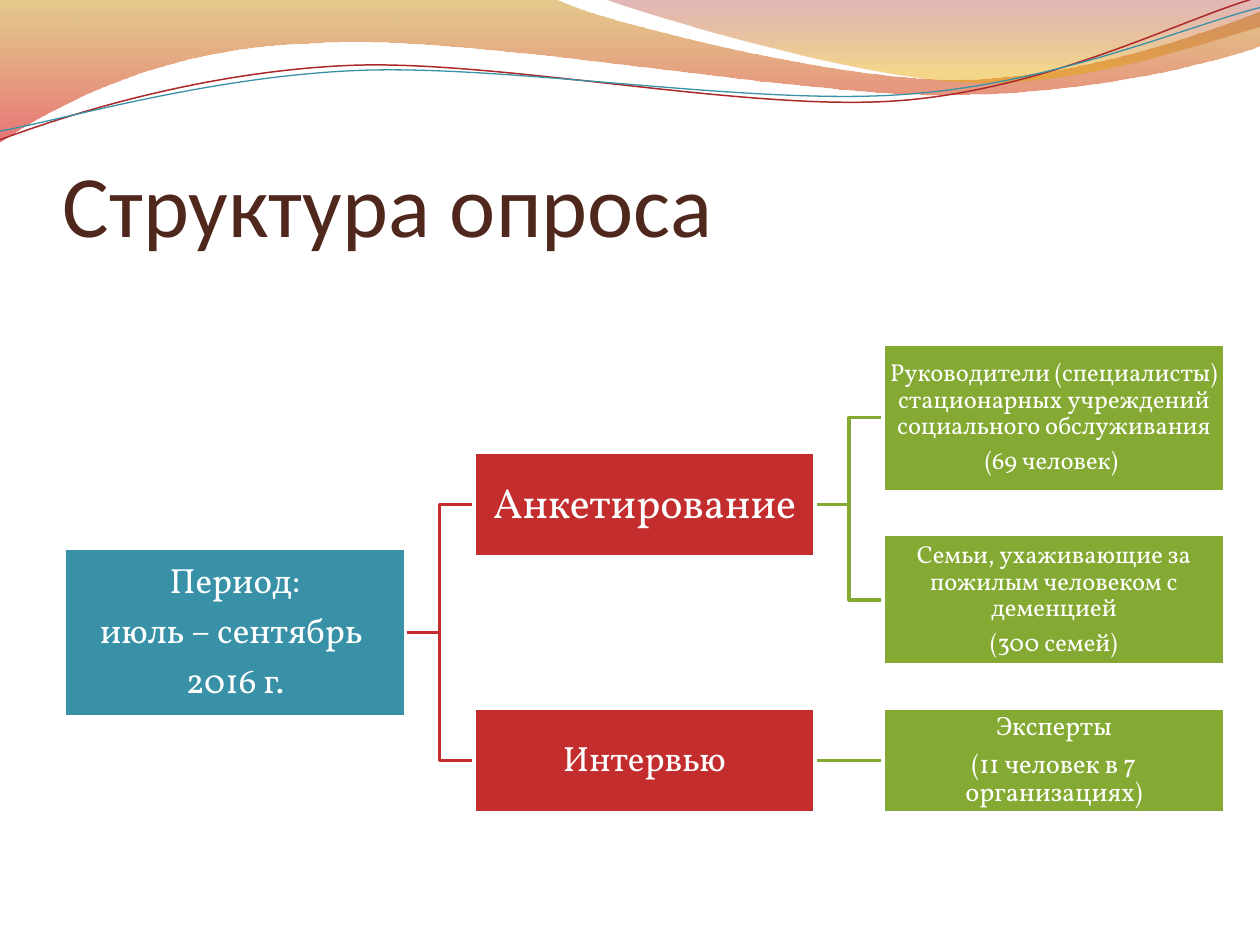
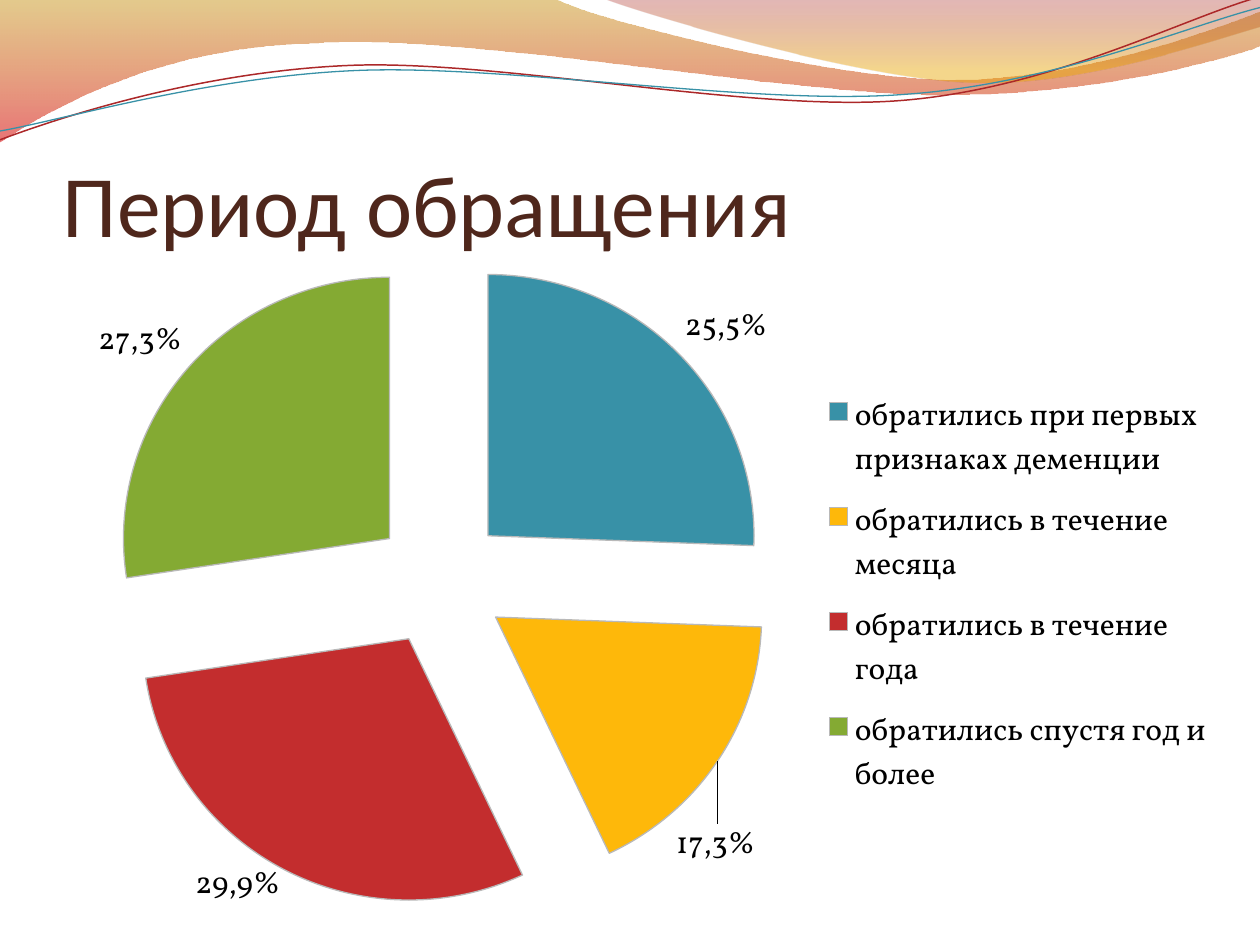
from lxml import etree
from pptx import Presentation
from pptx import util as u
from pptx.chart.data import CategoryChartData
from pptx.dml.color import RGBColor
from pptx.enum import chart as ch, shapes, text
from pptx.oxml import ns

C = {"teal": "3891A7", "red": "C32D2E", "green": "84AA33", "amber": "FEB80A",
     "title": "4F271C", "white": "FFFFFF", "black": "000000", "edge": "B9B9B9",
     "crimson": "AC2829", "gold": "C38B00", "scarlet": "D60305",
     "wine": "A11112", "orange": "E9A600"}
C = {name: RGBColor.from_string(value) for name, value in C.items()}
BODY, HEAD = "Vollkorn", "Calibri"
W, H = 10, 7.5


def write(tf, lines, size, color="black", font=BODY, align=None,
          spacing=None, after=0):
    """Fill a text frame, one paragraph for each line."""
    for i, line in enumerate(lines):
        p = tf.add_paragraph() if i else tf.paragraphs[0]
        if align is not None:
            p.alignment = align
        if spacing:
            p.line_spacing = spacing
            p.space_after = u.Pt(after * size)
        r = p.add_run()
        r.text = line
        r.font.size, r.font.name = u.Pt(size), font
        r.font.color.rgb = C[color]


def wave(s, segments, close):
    """Draw an outline from points (x, y) and Bezier curves (6 numbers)."""
    emu = [(u.Inches(seg[i]), u.Inches(seg[i + 1]))
           for seg in segments for i in range(0, len(seg), 2)]
    fb = s.shapes.build_freeform(*emu[0], scale=1.0)
    fb.add_line_segments(emu[1:], close=close)
    sp = fb.convert_to_shape()
    sp.shadow.inherit = False
    # Join the three steps of each curve into one Bezier segment
    steps = iter(sp._element.xpath(".//a:path/a:lnTo"))
    for seg in segments[1:]:
        group = [next(steps) for _ in range(len(seg) // 2)]
        if len(group) == 3:
            curve = etree.Element(ns.qn("a:cubicBezTo"))
            group[0].addprevious(curve)
            for step in group:
                curve.append(step[0])
                step.getparent().remove(step)
    return sp


prs = Presentation()
prs.slide_width, prs.slide_height = u.Inches(W), u.Inches(H)

# Shared decoration: gradient bands as (outline, stops), then thin lines
bands = [
    ([(0, 0), (4.4, -0.01), (4.76, 0.17, 6.64, 0.63, 7.58, 0.63),
      (8.53, 0.63, 9.58, 0.26, W, 0.09), (10.01, 0.36),
      (9.83, 0.44, 8.7, 0.76, 7.46, 0.75), (6.22, 0.75, 3.82, 0.28, 2.57, 0.34),
      (1.29, 0.36, 0.46, 0.83, -0.01, 1.13)],
     [("gold", 0, 45), ("scarlet", 1, 55)]),
    ([(4.79, -0.01), (5.09, 0.11, 6.82, 0.62, 7.69, 0.65),
      (8.56, 0.69, 9.61, 0.32, W, 0.21), (W, 0)],
     [("wine", 0, 30), ("orange", 0.8, 45)]),
]
threads = [
    ([(0, 1.11), (0.48, 0.93, 1.58, 0.57, 2.77, 0.52),
      (3.95, 0.47, 5.93, 0.89, 7.13, 0.8), (8.33, 0.71, 9.38, 0.15, 9.98, -0.02)],
     "crimson", 0.85),
    ([(0, 1.04), (0.47, 0.96, 1.64, 0.61, 2.83, 0.56),
      (4.03, 0.51, 5.97, 0.84, 7.17, 0.75), (8.36, 0.67, 9.41, 0.21, W, 0.06)],
     "teal", 0.75),
]

slides = []
for title in ("Структура опроса", "Период обращения"):
    s = prs.slides.add_slide(prs.slide_layouts[6])
    slides.append(s)
    for outline, stops in bands:
        sp = wave(s, outline, True)
        sp.line.fill.background()
        sp.fill.gradient()
        sp.fill.gradient_angle = 270
        for stop, (color, position, _) in zip(sp.fill.gradient_stops, stops):
            stop.color.rgb, stop.position = C[color], position
        for clr, (_, _, opacity) in zip(sp._element.xpath(".//a:gs/a:srgbClr"), stops):
            etree.SubElement(clr, ns.qn("a:alpha")).set("val", str(opacity * 1000))
    for outline, color, width in threads:
        sp = wave(s, outline, False)
        sp.fill.background()
        sp.line.color.rgb, sp.line.width = C[color], u.Pt(width)
    # Title
    tf = s.shapes.add_textbox(*map(u.Inches, (0.5, 0.77, 0.9 * W, 1.25))).text_frame
    tf.word_wrap, tf.vertical_anchor = True, text.MSO_ANCHOR.BOTTOM
    tf.margin_left = tf.margin_right = tf.margin_bottom = 0
    write(tf, [title], 50, "title", HEAD)

# Slide 1: survey tree, boxes as column, top, height, size, lines
s = slides[0]
LEFT, STEP, BOX_W = 0.51, 3.25, 2.71
column_colors = ["teal", "red", "green"]
tree = {
    "period": (0, 4.35, 1.34, 20, ["Период:", "июль – сентябрь ", "2016 г."]),
    "survey": (1, 3.59, 0.83, 24, ["Анкетирование"]),
    "heads": (2, 2.73, 1.17, 14, [
        "Руководители (специалисты) стационарных учреждений социального обслуживания",
        "(69 человек) "]),
    "families": (2, 4.24, 1.04, 14, [
        "Семьи, ухаживающие за пожилым человеком с деменцией", "(300 семей)"]),
    "interview": (1, 5.62, 0.83, 20, ["Интервью"]),
    "experts": (2, 5.62, 0.83, 15, ["Эксперты", "(11 человек в 7 организациях)"]),
}
boxes = {}
for name, (col, top, height, size, lines) in tree.items():
    sp = s.shapes.add_shape(shapes.MSO_SHAPE.RECTANGLE, *map(
        u.Inches, (LEFT + col * STEP, top, BOX_W, height)))
    boxes[name] = sp
    sp.shadow.inherit = False
    sp.fill.solid()
    sp.fill.fore_color.rgb = C[column_colors[col]]
    sp.line.color.rgb, sp.line.width = C["white"], u.Pt(2)
    tf = sp.text_frame
    tf.word_wrap, tf.vertical_anchor = True, text.MSO_ANCHOR.MIDDLE
    tf.margin_left = tf.margin_right = tf.margin_top = tf.margin_bottom = u.Inches(0.01)
    write(tf, lines, size, "white", align=text.PP_ALIGN.CENTER, spacing=0.9, after=0.35)

# Branches lie behind the boxes
for parent, child in [("period", "survey"), ("period", "interview"), ("survey", "heads"),
                      ("survey", "families"), ("interview", "experts")]:
    level = tree[parent][1] == tree[child][1]
    kind = shapes.MSO_CONNECTOR.STRAIGHT if level else shapes.MSO_CONNECTOR.ELBOW
    cn = s.shapes.add_connector(kind, 0, 0, 0, 0)
    cn.begin_connect(boxes[parent], 3)
    cn.end_connect(boxes[child], 1)
    cn.line.color.rgb = C[column_colors[tree[child][0]]]
    cn.line.width = u.Pt(2)
    etree.SubElement(cn._element.spPr, ns.qn("a:effectLst"))
    boxes["period"]._element.addprevious(cn._element)

# Slide 2: exploded pie
s = slides[1]
answers = [
    ("обратились при первых признаках деменции", 0.255, "25,5%", "teal"),
    ("обратились в течение месяца", 0.173, "17,3%", "amber"),
    ("обратились в течение года", 0.295, "29,9%", "red"),
    ("обратились спустя год и более", 0.273, "27,3%", "green"),
]
data = CategoryChartData(number_format="0.00%")
data.categories = [a[0] for a in answers]
data.add_series("Series 1", [a[1] for a in answers])
chart = s.shapes.add_chart(ch.XL_CHART_TYPE.PIE, *map(
    u.Inches, (0.28, 2.02, 9.45, 5.28)), data).chart
chart.has_title = False
chart.font.size, chart.font.name = u.Pt(18), BODY
chart.font.color.rgb = C["black"]
chart.has_legend = True
chart.legend.position = ch.XL_LEGEND_POSITION.RIGHT
chart.legend.include_in_layout = False

plot = chart.plots[0]
plot.vary_by_categories = True
series = plot.series[0]
labels = series.data_labels
labels.show_value = True
labels.number_format, labels.number_format_is_linked = "0.00%", False
labels.position = ch.XL_LABEL_POSITION.OUTSIDE_END
for i, (_, _, label, color) in enumerate(answers):
    point = series.points[i]
    point.format.fill.solid()
    point.format.fill.fore_color.rgb = C[color]
    point.format.line.color.rgb, point.format.line.width = C["edge"], u.Pt(0.75)
    write(point.data_label.text_frame, [label], 18)
    point.data_label.position = ch.XL_LABEL_POSITION.OUTSIDE_END
explosion = etree.Element(ns.qn("c:explosion"), val="25")
series._element.find(ns.qn("c:dPt")).addprevious(explosion)

# Places of plot, legend and the moved label, as shares of the chart
edge = [("xMode", "edge"), ("yMode", "edge")]
area = chart._chartSpace.chart.plotArea
legend = chart.legend._element
moved = series._element.xpath('.//c:dLbl[c:idx/@val="1"]')[0]
for parent, before, settings in [
        (area, None, [("layoutTarget", "inner"), *edge,
                      ("x", 0), ("y", 0), ("w", 0.68), ("h", 1)]),
        (legend, "c:legendPos", [*edge, ("x", 0.66), ("y", 0.19), ("w", 0.33), ("h", 0.67)]),
        (moved, "c:idx", [("x", -0.04), ("y", 0.09)])]:
    for old in parent.findall(ns.qn("c:layout")):
        parent.remove(old)
    layout = etree.Element(ns.qn("c:layout"))
    if before:
        parent.find(ns.qn(before)).addnext(layout)
    else:
        parent.insert(0, layout)
    manual = etree.SubElement(layout, ns.qn("c:manualLayout"))
    for tag, val in settings:
        etree.SubElement(manual, ns.qn("c:" + tag)).set("val", str(val))

prs.save("out.pptx")
